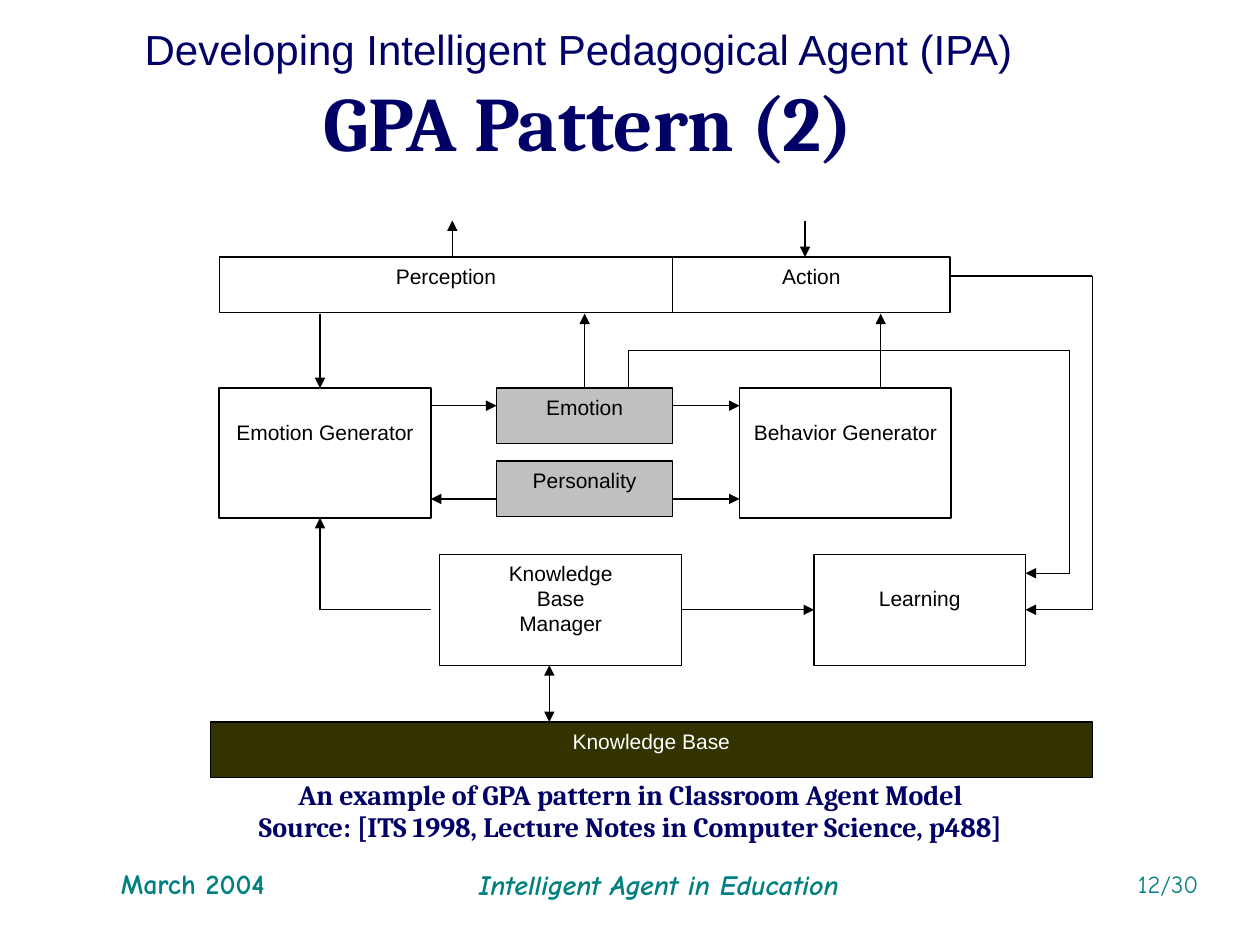
"""Build the GPA Pattern slide: title, agent block diagram, caption and footer."""
from lxml import etree
from pptx import Presentation
from pptx import util as u
from pptx.dml.color import RGBColor
from pptx.enum import shapes, text
from pptx.oxml.ns import qn

NAVY, TEAL, BLACK, WHITE, GRAY = "000066", "008080", "000000", "FFFFFF", "C0C0C0"
MID, LEFT, RIGHT = text.PP_ALIGN.CENTER, text.PP_ALIGN.LEFT, text.PP_ALIGN.RIGHT


def color(code):
    """Turn a hex string into a colour."""
    return RGBColor.from_string(code)


def write(shape, lines, face, size, code, align=MID, fmt={}, para={}):
    """Fill a shape with equally formatted paragraphs."""
    frame = shape.text_frame
    frame.word_wrap = True
    frame.text = "\n".join(lines)
    for i, par in enumerate(frame.paragraphs):
        par.alignment = align
        for key, val in para.items():
            if i or key != "space_before":
                setattr(par, key, val)
        font = par.runs[0].font
        for key, val in {"name": face, "size": u.Pt(size), **fmt}.items():
            setattr(font, key, val)
        font.color.rgb = color(code)


deck = Presentation()
deck.slide_width, deck.slide_height = u.Inches(10), u.Inches(7.5)
slide = deck.slides.add_slide(deck.slide_layouts[5])

title = slide.shapes.title
for key, val in {"left": 0.42, "top": 0.33, "width": 8.5, "height": 1.25}.items():
    setattr(title, key, u.Inches(val))
title.text_frame.vertical_anchor = text.MSO_ANCHOR.MIDDLE
write(title, ["GPA Pattern (2)"], "Cambria", 44, NAVY, fmt={"bold": True})

caption = ["An example of GPA pattern in Classroom Agent Model",
           "Source: [ITS 1998, Lecture Notes in Computer Science, p488]"]
bold = {"bold": True}
tight = {"line_spacing": 0.8, "space_before": u.Pt(3.2)}
labels = [
    ((1.05, 0.14, 7.14, 0.5), ["Developing Intelligent Pedagogical Agent (IPA)"],
     "Arial", 24, NAVY, LEFT, {}, {}),
    ((0.42, 6.17, 9.17, 0.58), caption, "Cambria", 16, NAVY, MID, bold, tight),
    ((0.49, 6.83, 2.08, 0.5), ["March 2004"], "Comic Neue", 16, TEAL, MID, bold, {}),
    ((3.44, 6.84, 3.58, 0.5), ["Intelligent Agent in Education"],
     "Comic Neue", 16, TEAL, MID, {"bold": True, "italic": True}, {}),
    ((7.53, 6.85, 2.08, 0.5), ["12/30"], "Comic Neue", 14, TEAL, RIGHT, {}, {}),
]
for place, *style in labels:
    write(slide.shapes.add_textbox(*map(u.Inches, place)), *style)

blocks = [
    ("Perception", (1.74, 2.04, 3.6, 0.44), WHITE, 0.75, 0.05),
    ("Action", (5.34, 2.04, 2.2, 0.44), WHITE, 0.75, 0.05),
    ("Emotion Generator", (1.74, 3.08, 1.68, 1.03), WHITE, 1, 0.25),
    ("Emotion", (3.94, 3.08, 1.4, 0.44), GRAY, 0.75, 0.05),
    ("Personality", (3.94, 3.66, 1.4, 0.44), GRAY, 0.75, 0.05),
    ("Behavior Generator", (5.87, 3.08, 1.68, 1.03), WHITE, 1, 0.25),
    ("Knowledge\nBase\nManager", (3.49, 4.4, 1.92, 0.88), WHITE, 0.75, 0.05),
    ("Learning", (6.46, 4.4, 1.68, 0.88), WHITE, 0.75, 0.25),
    ("Knowledge Base", (1.67, 5.73, 7, 0.44), "333300", 0.75, 0.05),
]
box = {}
for name, place, fill, width, inset in blocks:
    rect = slide.shapes.add_shape(shapes.MSO_SHAPE.RECTANGLE, *map(u.Inches, place))
    rect.shadow.inherit = False
    rect.fill.solid()
    rect.fill.fore_color.rgb = color(fill)
    rect.line.color.rgb = color(BLACK)
    rect.line.width = u.Pt(width)
    frame = rect.text_frame
    for key, val in {"margin_left": 0.05, "margin_right": 0.05, "margin_top": inset}.items():
        setattr(frame, key, u.Inches(val))
    frame.vertical_anchor = text.MSO_ANCHOR.TOP
    write(rect, name.split("\n"), "Arial", 12, WHITE if name == "Knowledge Base" else BLACK)
    box[name] = rect

END, BOTH = ["tailEnd"], ["headEnd", "tailEnd"]
links = [
    ((3.59, 2.04, 3.59, 1.75), END),
    ((6.39, 1.75, 6.39, 2.04), END),
    ((2.54, 2.49, 2.54, 3.08), END),
    ((4.64, 3.08, 4.64, 2.49), END),
    ((6.99, 3.08, 6.99, 2.49), END),
    ((3.42, 3.22, 3.94, 3.22), END),
    ((5.34, 3.22, 5.87, 3.22), END),
    ((3.94, 3.96, 3.42, 3.96), END),
    ((5.34, 3.96, 5.87, 3.96), END),
    ((3.42, 4.84, 2.54, 4.84), []),
    ((2.54, 4.84, 2.54, 4.11), END),
    ((4.36, 5.28, 4.36, 5.73), BOTH),
    ((4.99, 3.08, 4.99, 2.78), []),
    ((4.99, 2.78, 8.49, 2.78), []),
    ((8.49, 2.78, 8.49, 4.55), []),
    ((8.49, 4.55, 8.14, 4.55), END),
    ((7.54, 2.19, 8.67, 2.19), []),
    ((8.67, 2.19, 8.67, 4.84), []),
    ((8.67, 4.84, 8.14, 4.84), END, None, ("Learning", 3)),
    ((5.41, 4.84, 6.46, 4.84), END, ("Knowledge\nBase\nManager", 3), ("Learning", 1)),
]
for ends, heads, *joins in links:
    link = slide.shapes.add_connector(shapes.MSO_CONNECTOR.STRAIGHT, *map(u.Inches, ends))
    link.line.color.rgb = color(BLACK)
    link.line.width = u.Pt(0.75)
    for tag in heads:
        etree.SubElement(link.line._get_or_add_ln(), qn("a:" + tag), type="triangle")
    etree.SubElement(link._element.spPr, qn("a:effectLst"))
    for join, glue in zip(joins, (link.begin_connect, link.end_connect)):
        if join:
            glue(box[join[0]], join[1])

deck.save("out.pptx")
